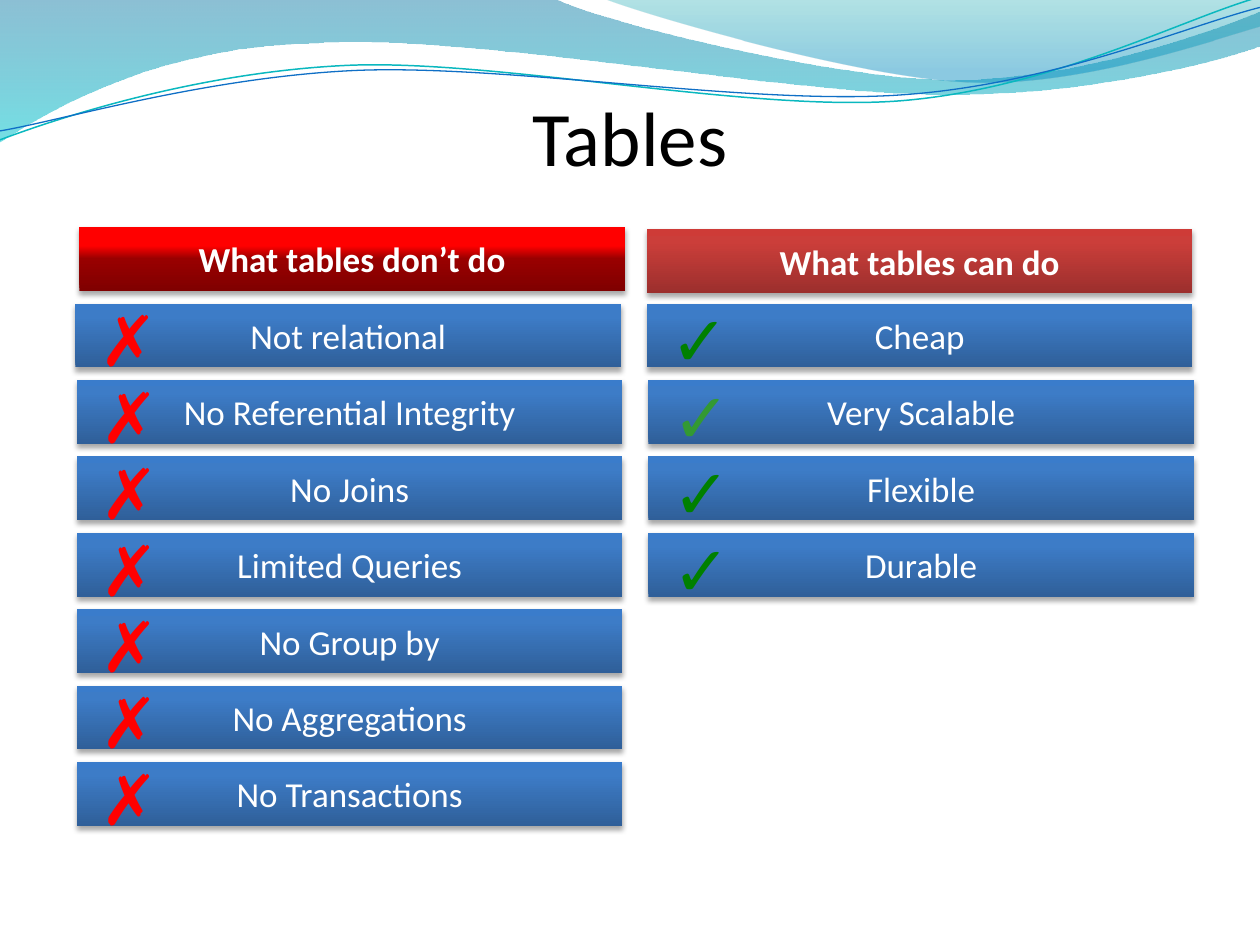
"""Build the slide comparing what tables don't do and can do."""
from lxml import etree
from pptx import Presentation
from pptx.dml.color import RGBColor
from pptx.enum.shapes import MSO_SHAPE
from pptx.enum.text import MSO_ANCHOR, MSO_AUTO_SIZE, PP_ALIGN
from pptx.oxml.ns import qn
from pptx.util import Cm, Pt

RECTANGLE = MSO_SHAPE.RECTANGLE
MIDDLE = MSO_ANCHOR.MIDDLE
CENTER, LEFT = PP_ALIGN.CENTER, PP_ALIGN.LEFT
GROW = MSO_AUTO_SIZE.SHAPE_TO_FIT_TEXT
FONT = "Calibri"
TITLE_ONLY = 5

COLORS = {
    "title": "000000", "label": "FFFFFF", "shadow": "000000",
    "cross": "FF0000", "check": "008000", "light check": "339933",
    "teal line": "0AB8BF", "blue line": "0F6FC6",
}
GRADIENTS = {
    "wide wave": [(0, "0074A1", 45), (100, "00C6CF", 55)],
    "corner wave": [(0, "00A1A9", 30), (80, "008BBF", 45)],
    "item": [(0, "2F5F99", 100), (80, "3D7CC7", 100), (100, "3A7CCB", 100)],
    "cannot": [(0, "800000", 100), (50, "990000", 100),
               (70, "FF0000", 100), (100, "FF0000", 100)],
    "can": [(0, "9C2F2D", 100), (80, "CB3E3A", 100), (100, "CE3B37", 100)],
}
WAVES = {
    "wide wave": [
        [(0, 0)], [(11.18, -0.03)],
        [(12.09, 0.43), (16.87, 1.6), (19.25, 1.6)],
        [(21.67, 1.6), (24.33, 0.66), (25.4, 0.23)],
        [(25.43, 0.91)],
        [(24.97, 1.12), (22.1, 1.93), (18.95, 1.9)],
        [(15.8, 1.9), (9.7, 0.71), (6.53, 0.86)],
        [(3.25, 0.91), (1.17, 2.11), (-0.03, 2.87)],
        [(0, 0)],
    ],
    "corner wave": [
        [(12.17, -0.03)],
        [(12.93, 0.28), (17.32, 1.57), (19.53, 1.65)],
        [(21.74, 1.75), (24.41, 0.81), (25.4, 0.53)],
        [(25.4, 0)], [(12.17, -0.03)],
    ],
}
CREST_ROTATION = 357.3
CRESTS = {
    "teal line": (0.85, [
        [(-0.05, 2.22)],
        [(1.19, 1.82), (4.02, 1.04), (7.05, 1.05)],
        [(10.05, 1.07), (15.02, 2.37), (18.08, 2.29)],
        [(21.13, 2.2), (23.87, 0.91), (25.41, 0.55)],
    ]),
    "blue line": (0.75, [
        [(-0.04, 2.04)],
        [(1.16, 1.9), (4.18, 1.15), (7.2, 1.16)],
        [(10.25, 1.18), (15.13, 2.25), (18.18, 2.17)],
        [(21.21, 2.1), (23.93, 1.06), (25.45, 0.75)],
    ]),
}
BAR_WIDTH, BAR_HEIGHT = 11, 1.29
ROW_TOP, ROW_PITCH = 6.12, 1.54
FIRST_ROW_SHIFT = -0.03
COLUMNS = [
    {"heading": "What tables don’t do", "gradient": "cannot",
     "heading_at": (1.6, 4.57), "left": 1.55, "mark": "✗",
     "items": [("Not relational", "cross"), ("No Referential Integrity", "cross"),
               ("No Joins", "cross"), ("Limited Queries", "cross"),
               ("No Group by", "cross"), ("No Aggregations", "cross"),
               ("No Transactions", "cross")]},
    {"heading": "What tables can do", "gradient": "can",
     "heading_at": (13.04, 4.62), "left": 13.07, "mark": "✓",
     "items": [("Cheap", "check"), ("Very Scalable", "light check"),
               ("Flexible", "check"), ("Durable", "check")]},
]


def write_text(frame, text, size, color, align=CENTER, bold=False):
    """Put one formatted line of text in a frame."""
    paragraph = frame.paragraphs[0]
    paragraph.alignment = align
    run = paragraph.add_run()
    run.text = text
    formats = {"name": FONT, "size": Pt(size), "bold": bold}
    for attribute, value in formats.items():
        setattr(run.font, attribute, value)
    run.font.color.rgb = RGBColor.from_string(COLORS[color])


def add_color(parent, color, opacity):
    """Append a colour with its opacity in percent."""
    node = etree.SubElement(parent, qn("a:srgbClr"), val=color)
    if opacity < 100:
        etree.SubElement(node, qn("a:alpha"), val=str(opacity * 1000))


def fill_gradient(shape, stops, angle):
    """Fill a shape with gradient stops at a counter-clockwise angle."""
    shape.fill.gradient()
    shape.fill.gradient_angle = angle
    stop_list = next(shape.element.iter(qn("a:gsLst")))
    for old_stop in list(stop_list):
        stop_list.remove(old_stop)
    for position, color, opacity in stops:
        stop = etree.SubElement(stop_list, qn("a:gs"), pos=str(position * 1000))
        add_color(stop, color, opacity)


def drop_shadow(shape):
    """Give a shape a soft shadow straight below it."""
    shape.shadow.inherit = False
    effects = next(shape.element.iter(qn("a:effectLst")))
    shadow = etree.SubElement(effects, qn("a:outerShdw"), blurRad=str(Pt(3.1)),
                              dist=str(Pt(1.8)), dir="5400000", rotWithShape="0")
    add_color(shadow, COLORS["shadow"], 35)


def add_outline(shapes, segments, close):
    """Draw a freeform whose three-point segments are cubic curves."""
    start, *rest = [(Cm(x), Cm(y)) for segment in segments for x, y in segment]
    builder = shapes.build_freeform(*start)
    builder.add_line_segments(rest, close=close)
    outline = builder.convert_to_shape()
    outline.shadow.inherit = False
    steps = iter(list(outline.element.iter(qn("a:lnTo"))))
    for segment in segments[1:]:
        lines = [next(steps) for point in segment]
        if len(lines) == 3:
            curve = etree.Element(qn("a:cubicBezTo"))
            lines[0].addprevious(curve)
            for line in lines:
                curve.append(line[0])
                line.getparent().remove(line)
    return outline


def add_waves(slide):
    """Draw the waves and the thin crest lines along the top."""
    for name, segments in WAVES.items():
        wave = add_outline(slide.shapes, segments, True)
        fill_gradient(wave, GRADIENTS[name], 270)
        wave.line.fill.background()
    crests = slide.shapes.add_group_shape()
    for name, (width, segments) in CRESTS.items():
        crest = add_outline(crests.shapes, segments, False)
        crest.rotation = CREST_ROTATION
        crest.fill.background()
        crest.line.color.rgb = RGBColor.from_string(COLORS[name])
        crest.line.width = Pt(width)


def add_title(slide, text):
    """Place the title in front of the waves."""
    title = slide.shapes.title
    title.element.getparent().append(title.element)
    place = {"left": Cm(1.27), "top": Cm(1.14), "width": Cm(22.86), "height": Cm(3.18)}
    for attribute, value in place.items():
        setattr(title, attribute, value)
    title.text_frame.vertical_anchor = MIDDLE
    write_text(title.text_frame, text, 44, "title")


def add_bar(shapes, left, top, text, gradient, bold=False):
    """Draw a shaded bar with a centred label."""
    bar = shapes.add_shape(RECTANGLE, Cm(left), Cm(top), Cm(BAR_WIDTH), Cm(BAR_HEIGHT))
    fill_gradient(bar, GRADIENTS[gradient], 90)
    bar.line.fill.background()
    drop_shadow(bar)
    bar.text_frame.vertical_anchor = MIDDLE
    write_text(bar.text_frame, text, 20, "label", bold=bold)


def add_item(slide, left, top, text, mark, mark_color):
    """Group a bar with the mark at its left end."""
    item = slide.shapes.add_group_shape()
    add_bar(item.shapes, left, top, text, "item")
    symbol = item.shapes.add_textbox(Cm(left + 0.23), Cm(top - 0.26), Cm(1.52), Cm(1.96))
    symbol.text_frame.word_wrap = True
    symbol.text_frame.auto_size = GROW
    write_text(symbol.text_frame, mark, 40, mark_color, LEFT)


def main():
    """Build and save the slide."""
    deck = Presentation()
    deck.slide_width, deck.slide_height = Cm(25.4), Cm(19.05)
    slide = deck.slides.add_slide(deck.slide_layouts[TITLE_ONLY])
    add_waves(slide)
    add_title(slide, "Tables")
    for column in COLUMNS:
        add_bar(slide.shapes, *column["heading_at"], column["heading"],
                column["gradient"], bold=True)
        for row, (text, mark_color) in enumerate(column["items"]):
            left = column["left"] + (0 if row else FIRST_ROW_SHIFT)
            add_item(slide, left, ROW_TOP + row * ROW_PITCH, text,
                     column["mark"], mark_color)
    deck.save("out.pptx")


if __name__ == "__main__":
    main()
